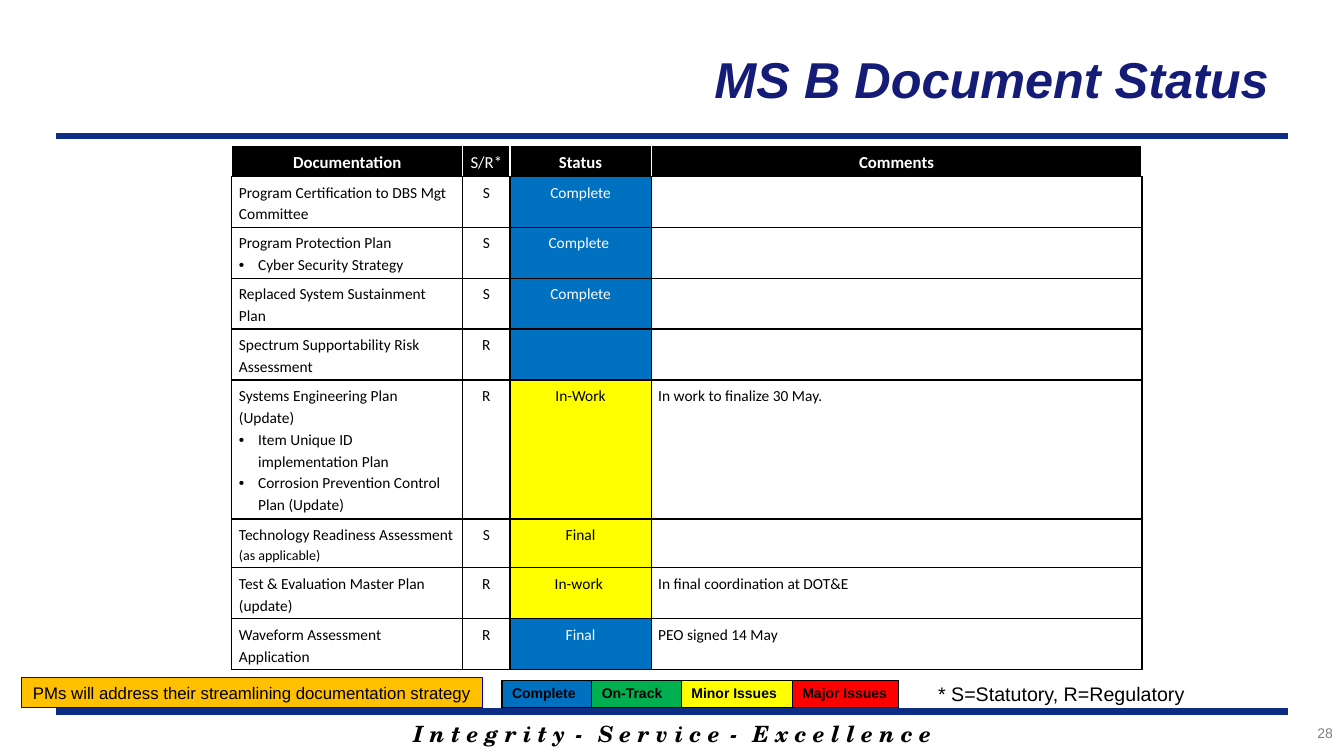
from collections import namedtuple
from lxml.etree import SubElement
from pptx import Presentation
from pptx.dml.color import RGBColor
from pptx.enum.shapes import MSO_CONNECTOR as Connector, MSO_SHAPE as Preset
from pptx.enum.text import MSO_ANCHOR as Anchor, PP_ALIGN as Align
from pptx.oxml.ns import qn
from pptx.util import Inches, Pt

BLACK = RGBColor(0x00, 0x00, 0x00)
WHITE = RGBColor(0xFF, 0xFF, 0xFF)
NAVY = RGBColor(0x15, 0x1C, 0x77)
RULE_BLUE = RGBColor(0x0C, 0x2D, 0x83)
EDGE_BLUE = RGBColor(0x00, 0x00, 0xCC)
GRAY = RGBColor(0x7F, 0x7F, 0x7F)
AMBER = RGBColor(0xFF, 0xC0, 0x00)
BLUE = RGBColor(0x00, 0x70, 0xC0)
GREEN = RGBColor(0x00, 0xB0, 0x50)
YELLOW = RGBColor(0xFF, 0xFF, 0x00)
RED = RGBColor(0xFF, 0x00, 0x00)

WIDTH, HEIGHT = Inches(13.33), Inches(7.5)
COLUMN, ROW = WIDTH / 40, HEIGHT / 30
Box = namedtuple("Box", "left top width height")
Document = namedtuple("Document", "name note bullets basis status fill comment")

HEADINGS = ["Documentation", "S/R*", "Status", "Comments"]
TABLE_COLUMNS = [6.87, 1.41, 4.2, 14.61]
TABLE_ROWS = [1.23] + [2.02] * 4 + [5.52, 1.94] + [2.02] * 2
DOCUMENTS = [
    Document("Program Certification to DBS Mgt Committee", "", [], "S", "Complete", BLUE, ""),
    Document("Program Protection Plan", "", ["Cyber Security Strategy"], "S", "Complete ", BLUE, ""),
    Document("Replaced System Sustainment Plan", "", [], "S", "Complete", BLUE, ""),
    Document("Spectrum Supportability Risk Assessment", "", [], "R", "", BLUE, ""),
    Document("Systems Engineering Plan (Update)", "",
             ["Item Unique ID implementation Plan", "Corrosion Prevention Control Plan (Update)"],
             "R", "In-Work", YELLOW, "In work to finalize 30 May."),
    Document("Technology Readiness Assessment ", "(as applicable)", [], "S", "Final", YELLOW, ""),
    Document("Test & Evaluation Master Plan (update)", "", [], "R", "In-work ", YELLOW,
             "In final coordination at DOT&E"),
    Document("Waveform Assessment Application", "", [], "R", "Final", BLUE, "PEO signed 14 May"),
]
LEGEND = [("Complete", BLUE, 2.67), ("On-Track", GREEN, 2.67),
          ("Minor Issues", YELLOW, 3.3), ("Major Issues", RED, 3.15)]
MOTTO = ["I n t e g r i t y", "S e r v i c e", "E x c e l l e n c e"]


def emu(box):
    return [round(value * unit) for value, unit in zip(box, (COLUMN, ROW, COLUMN, ROW))]


def apply(target, formats):
    for name, value in formats.items():
        setattr(target, name, value)


def add_span(para, text, color, **font):
    span = para.add_run()
    span.text = text
    span.font.color.rgb = color
    apply(span.font, font)
    return span


def add_text(page, box, text, color, align, frame_format, **font):
    frame = page.shapes.add_textbox(*emu(box)).text_frame
    apply(frame, {"word_wrap": True, **frame_format})
    para = frame.paragraphs[0]
    para.alignment = align
    if text:
        add_span(para, text, color, **font)
    return para


def add_rule(page, left, right, row):
    start_x, y, end_x, _ = emu(Box(left, row, right, 0))
    rule = page.shapes.add_connector(Connector.STRAIGHT, start_x, y, end_x, y)
    rule.line.color.rgb = RULE_BLUE
    rule.line.width = Pt(4.5)
    SubElement(rule._element.spPr, qn("a:effectLst"))


def style_cell(cell, fill, edges, margins):
    cell.fill.solid()
    cell.fill.fore_color.rgb = fill
    sides = ("margin_left", "margin_top", "margin_right", "margin_bottom")
    apply(cell, dict(zip(sides, map(Inches, margins * 2))))
    properties = cell._tc.get_or_add_tcPr()
    for index, (side, color) in enumerate(zip("LRTB", edges)):
        edge = SubElement(properties, qn("a:ln" + side), w=str(Pt(1)))
        SubElement(SubElement(edge, qn("a:solidFill")), qn("a:srgbClr"), val=str(color))
        properties.insert(index, edge)


def add_grid(page, left, top, columns, rows):
    box = Box(left, top, sum(columns), sum(rows))
    table = page.shapes.add_table(len(rows), len(columns), *emu(box)).table
    for column, width in zip(table.columns, columns):
        column.width = round(width * COLUMN)
    for row, height in zip(table.rows, rows):
        row.height = round(height * ROW)
    return table


def add_bullet(para, text):
    properties = para._p.get_or_add_pPr()
    properties.set("marL", str(Inches(0.19)))
    properties.set("indent", str(-Inches(0.19)))
    SubElement(properties, qn("a:buFont"), typeface="Arial")
    SubElement(properties, qn("a:buChar"), char="•")
    add_span(para, text, BLACK, name="Calibri", size=Pt(11))


def fill_document(cells, document):
    body = {"name": "Calibri", "size": Pt(11)}
    status_color = WHITE if document.fill == BLUE else BLACK
    texts = [(document.name, BLACK, WHITE, Align.LEFT),
             (document.basis, BLACK, WHITE, Align.CENTER),
             (document.status, status_color, document.fill, Align.CENTER),
             (document.comment, BLACK, WHITE, Align.LEFT)]
    for cell, (text, color, fill, align) in zip(cells, texts):
        style_cell(cell, fill, [BLACK] * 4, (0.07, 0.04))
        para = cell.text_frame.paragraphs[0]
        apply(para, {"alignment": align, "line_spacing": 1.15})
        if text:
            add_span(para, text, color, **body)
    frame = cells[0].text_frame
    if document.note:
        add_span(frame.paragraphs[0], document.note, BLACK, name="Calibri", size=Pt(10))
    for bullet in document.bullets:
        para = frame.add_paragraph()
        para.line_spacing = 1.15
        add_bullet(para, bullet)


def add_status_table(page, left, top):
    table = add_grid(page, left, top, TABLE_COLUMNS, TABLE_ROWS)
    for cell, heading in zip(table.rows[0].cells, HEADINGS):
        style_cell(cell, BLACK, [WHITE, WHITE, WHITE, BLACK], (0.04, 0.04))
        para = cell.text_frame.paragraphs[0]
        apply(para, {"alignment": Align.CENTER, "line_spacing": 1.15, "space_after": Pt(10)})
        add_span(para, heading, WHITE, name="Calibri", size=Pt(12), bold=heading != "S/R*")
    for index, document in enumerate(DOCUMENTS, 1):
        fill_document(list(table.rows[index].cells), document)


def add_legend(page, left, top):
    table = add_grid(page, left, top, [width for _, _, width in LEGEND], [1.08])
    for cell, (label, fill, _) in zip(table.rows[0].cells, LEGEND):
        style_cell(cell, fill, [BLACK] * 4, (0.1, 0.05))
        add_span(cell.text_frame.paragraphs[0], label, BLACK, name="Arial", size=Pt(10), bold=True)


def add_strategy_note(page, box):
    note = page.shapes.add_shape(Preset.RECTANGLE, *emu(box))
    note.shadow.inherit = False
    note.fill.solid()
    note.fill.fore_color.rgb = AMBER
    note.line.color.rgb = EDGE_BLUE
    note.line.width = Pt(0.75)
    apply(note.text_frame, {"word_wrap": False, "vertical_anchor": Anchor.MIDDLE})
    para = note.text_frame.paragraphs[0]
    para.alignment = Align.CENTER
    add_span(para, "PMs will address their streamlining documentation strategy", BLACK,
             name="Arial", size=Pt(12))


def add_motto(page, box):
    para = add_text(page, box, "", BLACK, Align.CENTER, {})
    font = {"name": "TeX Gyre Schola", "size": Pt(16), "bold": True, "italic": True}
    for index, word in enumerate(MOTTO):
        if index:
            dash = add_span(para, " - ", BLACK, **font)
            dash.font._element.set("spc", "300")
        add_span(para, word, BLACK, **font)


def build_status_page(deck):
    page = deck.slides.add_slide(deck.slide_layouts[6])
    add_motto(page, Box(5.67, 28.4, 28.68, 1.48))
    for row in (28.24, 5.4):
        add_rule(page, 1.68, 38.34, row)
    add_text(page, Box(14.07, 0.6, 24.42, 5), "MS B Document Status", NAVY, Align.RIGHT,
             {"vertical_anchor": Anchor.MIDDLE, "margin_right": Inches(0.24)},
             name="Arial", size=Pt(36), bold=True, italic=True)
    add_status_table(page, 6.9, 5.76)
    add_text(page, Box(27.6, 26.88, 7.98, 1.36), "* S=Statutory, R=Regulatory", BLACK,
             Align.CENTER, {"word_wrap": False}, name="Arial", size=Pt(14))
    add_legend(page, 14.94, 27)
    add_strategy_note(page, Box(0.63, 26.88, 13.74, 1.2))
    add_text(page, Box(34.95, 28.56, 5.01, 1.32), "28", GRAY, Align.RIGHT, {},
             name="Arial", size=Pt(10))


def main():
    deck = Presentation()
    apply(deck, {"slide_width": WIDTH, "slide_height": HEIGHT})
    build_status_page(deck)
    deck.save("out.pptx")


if __name__ == "__main__":
    main()
